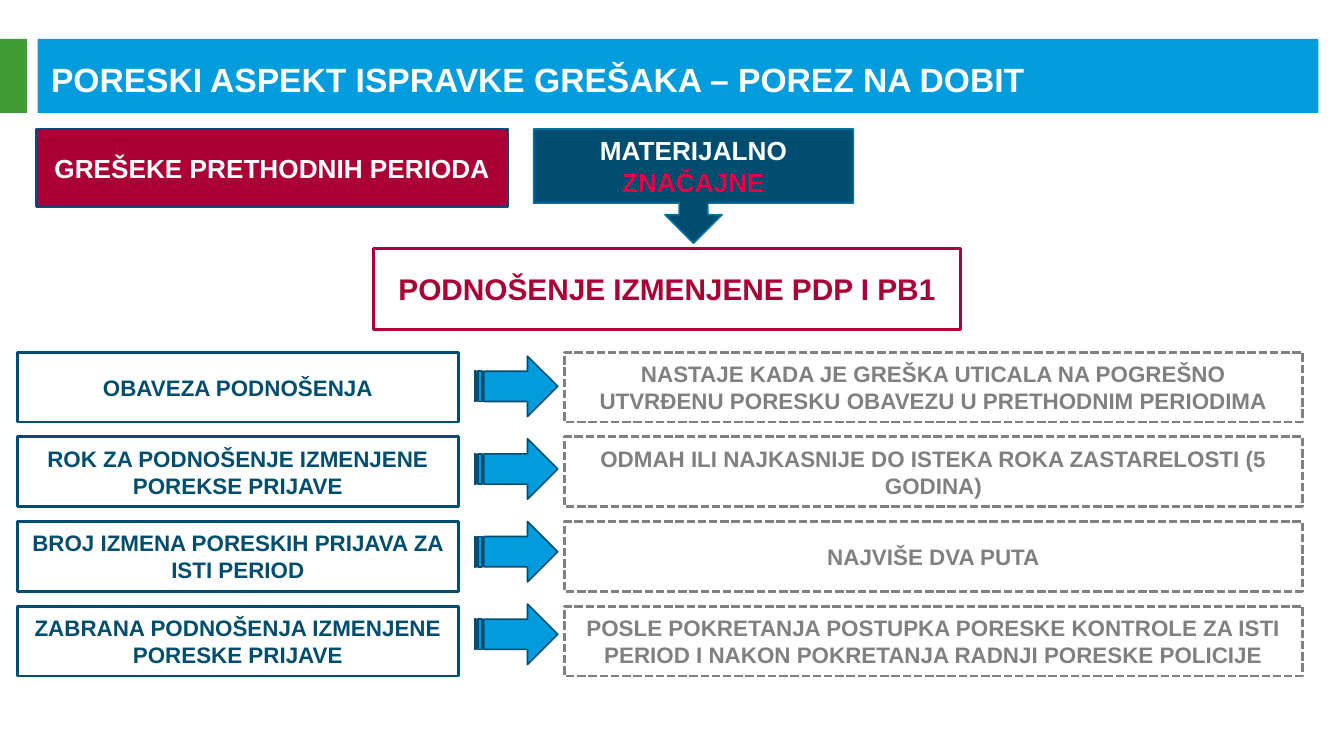
from dataclasses import dataclass

import pptx
import pptx.dml.color
import pptx.enum.dml
import pptx.enum.shapes
import pptx.enum.text
import pptx.util

RGBColor = pptx.dml.color.RGBColor
SHAPE = pptx.enum.shapes.MSO_SHAPE
ALIGN = pptx.enum.text.PP_ALIGN
DASH = pptx.enum.dml.MSO_LINE_DASH_STYLE

WHITE = RGBColor(0xFF, 0xFF, 0xFF)
BLUE = RGBColor(0x00, 0x9C, 0xDE)
GREEN = RGBColor(0x3F, 0x9C, 0x35)
CRIMSON = RGBColor(0xAB, 0x00, 0x35)
RED = RGBColor(0xE4, 0x00, 0x46)
NAVY = RGBColor(0x00, 0x4E, 0x6F)
STEEL = RGBColor(0x00, 0x73, 0xA4)
GREY = RGBColor(0x80, 0x80, 0x80)

FONT = "Arial"
# The 16:9 slide is a grid of square cells, 100 columns wide
CELL = pptx.util.Inches(0.1)
COLUMNS = 100
ROWS = COLUMNS * 9 / 16

REQUIREMENTS = [
    ("OBAVEZA PODNOŠENJA",
     "NASTAJE KADA JE GREŠKA UTICALA NA POGREŠNO UTVRĐENU PORESKU OBAVEZU U PRETHODNIM PERIODIMA"),
    ("ROK ZA PODNOŠENJE IZMENJENE POREKSE PRIJAVE",
     "ODMAH ILI NAJKASNIJE DO ISTEKA ROKA ZASTARELOSTI (5 GODINA)"),
    ("BROJ IZMENA PORESKIH PRIJAVA ZA ISTI PERIOD",
     "NAJVIŠE DVA PUTA"),
    ("ZABRANA PODNOŠENJA IZMENJENE PORESKE PRIJAVE",
     "POSLE POKRETANJA POSTUPKA PORESKE KONTROLE ZA ISTI PERIOD I NAKON POKRETANJA RADNJI PORESKE POLICIJE"),
]


@dataclass
class Box:
    """A region measured in grid columns and rows."""
    left: float
    top: float
    width: float
    height: float

    def inner(self, left, top, width, height):
        return Box(self.left + left, self.top + top, width, height)

    def lengths(self):
        return [round(value * CELL) for value in (self.left, self.top, self.width, self.height)]


def write_text(shape, runs, size, alignment=ALIGN.CENTER, space_after=0):
    frame = shape.text_frame
    frame.word_wrap = True
    frame.auto_size = pptx.enum.text.MSO_AUTO_SIZE.NONE
    frame.vertical_anchor = pptx.enum.text.MSO_ANCHOR.MIDDLE
    paragraph = frame.paragraphs[0]
    paragraph.alignment = alignment
    paragraph.space_before = pptx.util.Pt(0)
    paragraph.space_after = pptx.util.Pt(space_after)
    for text, color in runs:
        run = paragraph.add_run()
        run.text = text
        run.font.name = FONT
        run.font.size = pptx.util.Pt(size)
        run.font.bold = True
        run.font.color.rgb = color


def add_shape(slide, kind, box, fill=None, line=None, line_width=1.5, dash=None):
    shape = slide.shapes.add_shape(kind, *box.lengths())
    shape.shadow.inherit = False
    if fill is None:
        shape.fill.background()
    else:
        shape.fill.solid()
        shape.fill.fore_color.rgb = fill
    if line is None:
        shape.line.fill.background()
    else:
        shape.line.color.rgb = line
        shape.line.width = pptx.util.Pt(line_width)
        if dash is not None:
            shape.line.dash_style = dash
    return shape


def add_header(slide, box):
    add_shape(slide, SHAPE.RECTANGLE, box.inner(2.8, 0, 95.3, box.height), BLUE)
    add_shape(slide, SHAPE.RECTANGLE, box.inner(0, 0, 2, box.height), GREEN)
    title = slide.shapes.title
    title.left, title.top, title.width, title.height = box.inner(2.8, 0.1, 96.5, 5.8).lengths()
    write_text(title, [("PORESKI ASPEKT ISPRAVKE GREŠAKA – POREZ NA DOBIT", WHITE)], 18, ALIGN.LEFT)
    # Bring the title in front of its bar
    title.element.getparent().append(title.element)


def add_error_flow(slide, box):
    errors = add_shape(slide, SHAPE.RECTANGLE, box.inner(0, 0, 35.1, 5.8), CRIMSON, NAVY)
    write_text(errors, [("GREŠEKE PRETHODNIH PERIODA", WHITE)], 14, space_after=6)

    callout = add_shape(slide, SHAPE.DOWN_ARROW_CALLOUT, box.inner(37, 0, 23.8, 8.5),
                        NAVY, STEEL, 0.85)
    write_text(callout, [("MATERIJALNO ", WHITE), ("ZNAČAJNE", RED)], 14)

    filing = add_shape(slide, SHAPE.RECTANGLE, box.inner(25.1, 8.9, 43.7, 6), line=CRIMSON)
    write_text(filing, [("PODNOŠENJE IZMENJENE PDP I PB1", CRIMSON)], 16, space_after=6)


def add_requirements(slide, box):
    row_height = 5.2
    arrow_height = 4.5
    row_step = (box.height - row_height) / (len(REQUIREMENTS) - 1)
    arrow_step = 6.15
    for index, (requirement, explanation) in enumerate(REQUIREMENTS):
        top = index * row_step
        label = add_shape(slide, SHAPE.RECTANGLE, box.inner(0, top, 32.8, row_height), line=NAVY)
        write_text(label, [(requirement, NAVY)], 12, space_after=6)

        arrow_top = 0.3 + index * arrow_step
        add_shape(slide, SHAPE.STRIPED_RIGHT_ARROW, box.inner(34, arrow_top, 6.2, arrow_height),
                  BLUE, NAVY, 0.85)

        detail = add_shape(slide, SHAPE.RECTANGLE, box.inner(40.7, top, 54.9, row_height),
                           line=GREY, dash=DASH.SQUARE_DOT)
        write_text(detail, [(explanation, GREY)], 12, space_after=6)


def main():
    presentation = pptx.Presentation()
    presentation.slide_width = round(COLUMNS * CELL)
    presentation.slide_height = round(ROWS * CELL)
    slide = presentation.slides.add_slide(presentation.slide_layouts.get_by_name("Title Only"))
    add_header(slide, Box(0, 2.9, COLUMNS, 5.5))
    add_error_flow(slide, Box(2.7, 9.6, 68.8, 14.9))
    add_requirements(slide, Box(1.3, 26.2, 95.6, 24.1))
    presentation.save("out.pptx")


if __name__ == "__main__":
    main()
